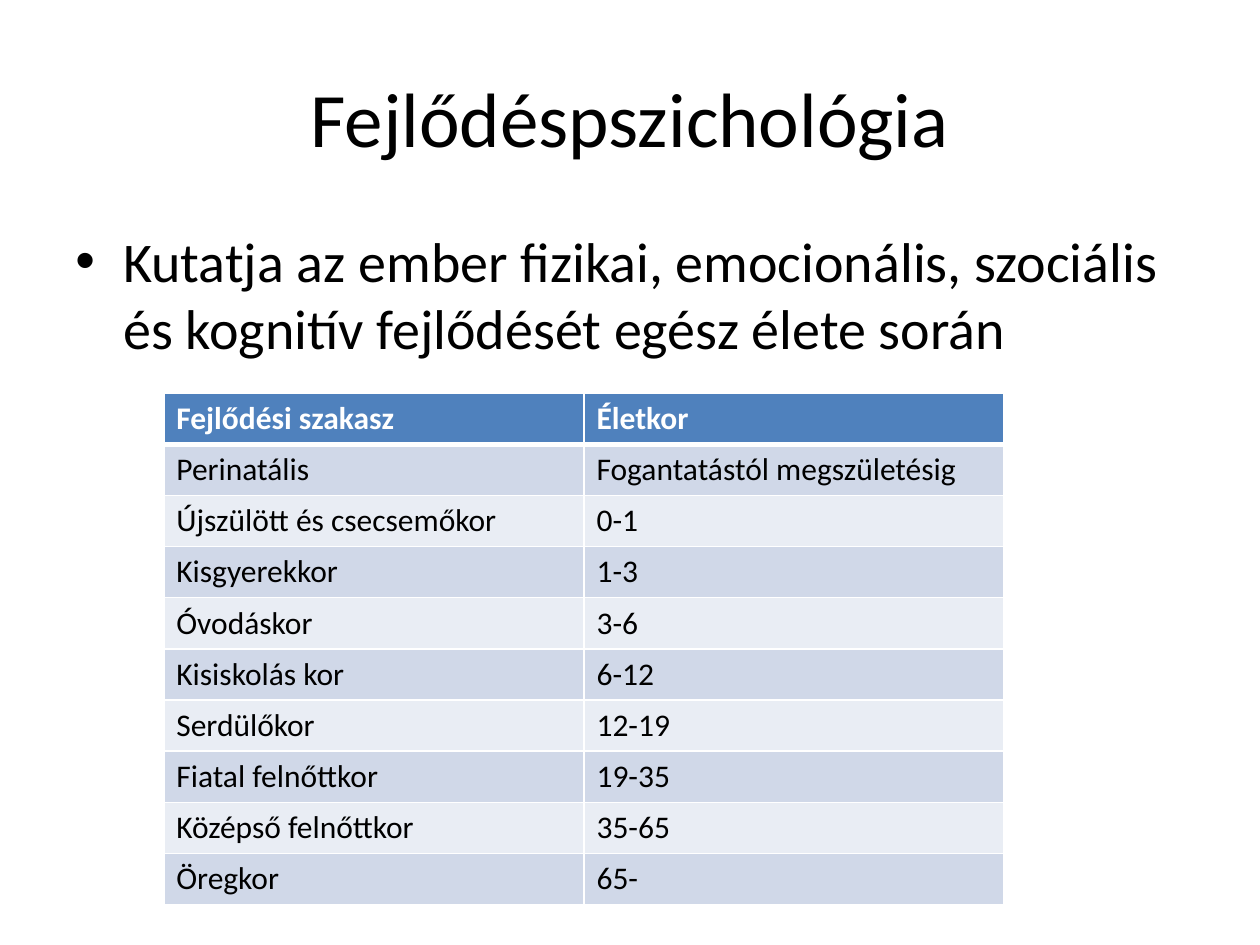
from lxml.etree import SubElement
from pptx import Presentation
from pptx.dml.color import RGBColor
from pptx.enum.text import MSO_ANCHOR, PP_ALIGN
from pptx.oxml.ns import qn
from pptx.util import Emu, Pt

PX = 9144  # 100 px to the inch
FONT = "Calibri"
BLACK = RGBColor(0x00, 0x00, 0x00)
WHITE = RGBColor(0xFF, 0xFF, 0xFF)
BLUE = RGBColor(0x4F, 0x81, 0xBD)
BANDS = RGBColor(0xE9, 0xED, 0xF4), RGBColor(0xD0, 0xD8, 0xE8)

TITLE = "Fejlődéspszichológia"
POINT = ("Kutatja az ember fizikai, emocionális, szociális "
         "és kognitív fejlődését egész élete során")
STAGES = [
    ("Fejlődési szakasz", "Életkor"),
    ("Perinatális", "Fogantatástól megszületésig"),
    ("Újszülött és csecsemőkor", "0-1"),
    ("Kisgyerekkor", "1-3"),
    ("Óvodáskor", "3-6"),
    ("Kisiskolás kor", "6-12"),
    ("Serdülőkor", "12-19"),
    ("Fiatal felnőttkor", "19-35"),
    ("Középső felnőttkor", "35-65"),
    ("Öregkor", "65-"),
]


def px(*vals):
    return [Emu(round(v * PX)) for v in vals]


def write(frame, text, size, color=BLACK, bold=False):
    """Fill the frame with one formatted paragraph and return it."""
    para = frame.paragraphs[0]
    run = para.add_run()
    run.text = text
    style = {"name": FONT, "size": Pt(size), "bold": bold}
    for key, val in style.items():
        setattr(run.font, key, val)
    run.font.color.rgb = color
    return para


def add_title(slide, box):
    title = slide.shapes.title
    title.left, title.top, title.width, title.height = px(*box)
    frame = title.text_frame
    frame.vertical_anchor = MSO_ANCHOR.MIDDLE
    write(frame, TITLE, 44).alignment = PP_ALIGN.CENTER


def add_point(slide, box):
    frame = slide.shapes.add_textbox(*px(*box)).text_frame
    frame.word_wrap = True
    props = write(frame, POINT, 32)._p.get_or_add_pPr()
    indent, = px(38)
    props.set("marL", str(indent))
    props.set("indent", str(-indent))
    space = SubElement(props, qn("a:spcBef"))
    SubElement(space, qn("a:spcPct"), val="20000")
    SubElement(props, qn("a:buFont"), typeface="Arial")
    SubElement(props, qn("a:buChar"), char="•")


def add_edges(cell, widths):
    """Draw white borders, given their widths in points by side."""
    props = cell._tc.get_or_add_tcPr()
    for side, width in widths.items():
        line = SubElement(props, qn(f"a:ln{side}"), w=str(Pt(width)))
        fill = SubElement(line, qn("a:solidFill"))
        SubElement(fill, qn("a:srgbClr"), val=str(WHITE))


def add_stages(slide, box):
    rows, cols = len(STAGES), len(STAGES[0])
    table = slide.shapes.add_table(rows, cols, *px(*box)).table
    for r, texts in enumerate(STAGES):
        head = r == 0
        edges = {"L": 1, "R": 1, "T": 3 if r == 1 else 1, "B": 3 if head else 1}
        for c, text in enumerate(texts):
            cell = table.cell(r, c)
            add_edges(cell, edges)
            cell.fill.solid()
            cell.fill.fore_color.rgb = BLUE if head else BANDS[r % 2]
            write(cell.text_frame, text, 18, WHITE if head else BLACK, head)


def main():
    deck = Presentation()
    deck.slide_width, deck.slide_height = px(1000, 750)
    slide = deck.slides.add_slide(deck.slide_layouts[5])
    add_title(slide, (50, 30, 900, 125))
    add_point(slide, (50, 175, 900, 495))
    add_stages(slide, (130, 312, 667, 406))
    deck.save("out.pptx")


if __name__ == "__main__":
    main()
